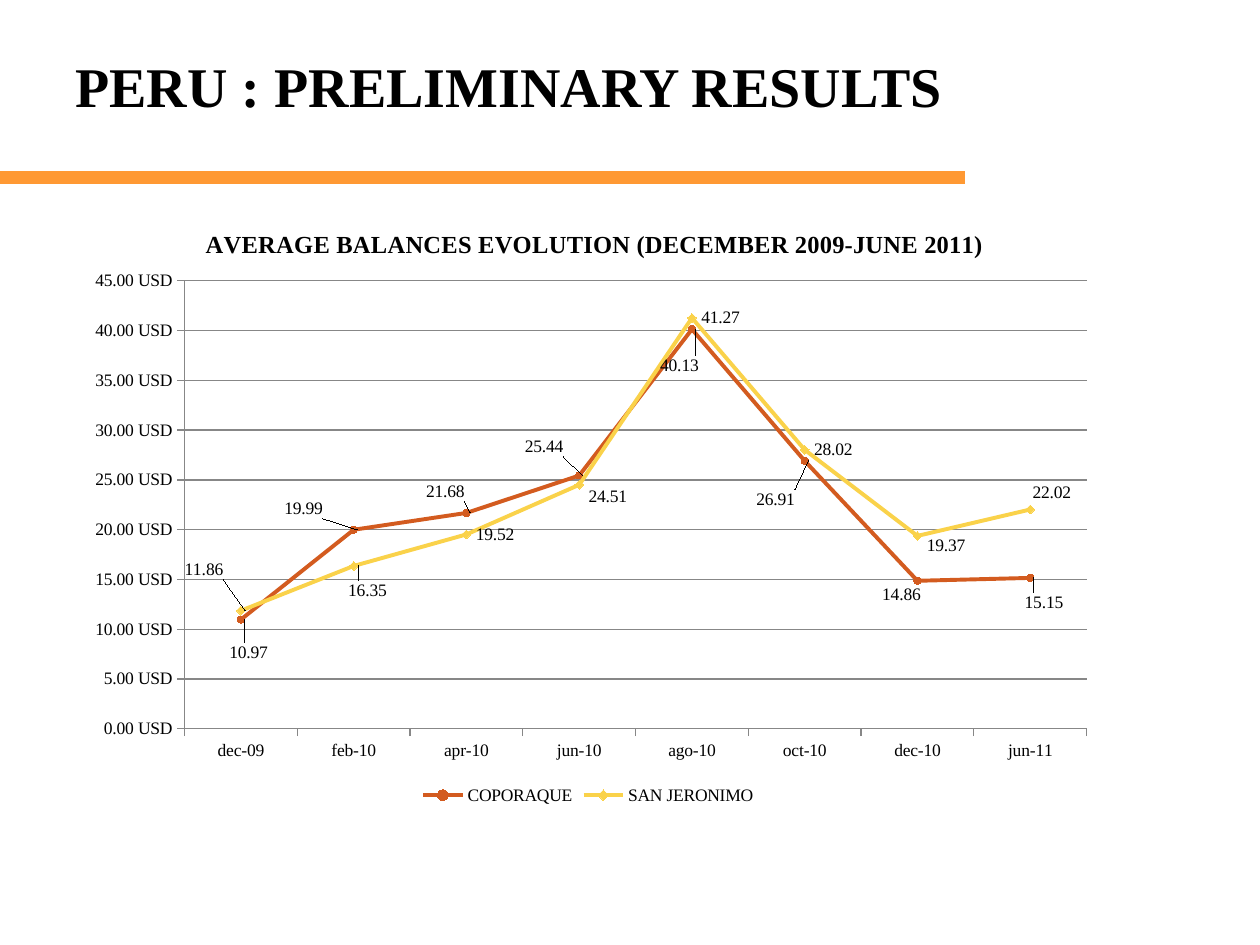
from dataclasses import dataclass

from lxml.etree import SubElement
from pptx import Presentation
from pptx.chart.data import CategoryChartData
from pptx.dml.color import RGBColor
from pptx.enum.chart import (XL_CHART_TYPE, XL_LABEL_POSITION, XL_LEGEND_POSITION,
                             XL_MARKER_STYLE, XL_TICK_MARK)
from pptx.enum.shapes import MSO_CONNECTOR
from pptx.oxml import parse_xml
from pptx.oxml.ns import nsdecls, qn
from pptx.util import Pt

BLACK = RGBColor(0x00, 0x00, 0x00)
GRAY = RGBColor(0x87, 0x87, 0x87)
ORANGE = RGBColor(0xFF, 0x99, 0x33)
RUST = RGBColor(0xD3, 0x5B, 0x1F)
YELLOW = RGBColor(0xFA, 0xD2, 0x4A)
FONT = "Times New Roman"
CHART_WIDTH, CHART_HEIGHT = 589.7, 351.4
MONTHS = ["dec-09", "feb-10", "apr-10", "jun-10", "ago-10", "oct-10", "dec-10", "jun-11"]


@dataclass(frozen=True)
class Village:
    """A village's balances, its look, and label shifts in points by month index."""
    name: str
    balances: list[float]
    color: RGBColor
    marker: XL_MARKER_STYLE
    marker_size: int
    label_shifts: dict[int, tuple[float, float]]


VILLAGES = [
    Village("COPORAQUE", [10.97, 19.99, 21.68, 25.44, 40.13, 26.91, 14.86, 15.15],
            RUST, XL_MARKER_STYLE.CIRCLE, 4,
            {0: (-11.5, 19), 1: (-44.5, -12), 2: (-28, -12.5), 3: (-36, -16.5),
             4: (-23, 20.5), 5: (-32.5, 22), 6: (-25, 8), 7: (-8, 14)}),
    Village("SAN JERONIMO", [11.86, 16.35, 19.52, 24.51, 41.27, 28.02, 19.37, 22.02],
            YELLOW, XL_MARKER_STYLE.DIAMOND, 5,
            {0: (-37.5, -23.5), 1: (-8.5, 14), 3: (0, 7), 6: (0, 5.5), 7: (-4, -10)}),
]


def set_font(font, size: float, bold: bool = False) -> None:
    """Apply the slide's typeface in black."""
    font.name, font.size, font.bold = FONT, Pt(size), bold
    font.color.rgb = BLACK


def manual_layout(x: float, y: float, size: tuple[float, float] | None = None,
                  edge: bool = True):
    """Return a chart layout element for a place given in points."""
    layout = parse_xml(f"<c:layout {nsdecls('c')}><c:manualLayout/></c:layout>")
    settings = []
    if size:
        settings.append(("layoutTarget", "inner"))
    if edge:
        settings += [("xMode", "edge"), ("yMode", "edge")]
    settings += [("x", x / CHART_WIDTH), ("y", y / CHART_HEIGHT)]
    if size:
        settings += [("w", size[0] / CHART_WIDTH), ("h", size[1] / CHART_HEIGHT)]
    for tag, value in settings:
        SubElement(layout[0], qn(f"c:{tag}")).set("val", str(value))
    return layout


def place(parent, layout, after: str | None = None) -> None:
    """Replace the parent's layout, putting it after the named child or first."""
    for old in parent.findall(qn("c:layout")):
        parent.remove(old)
    if after is None:
        parent.insert(0, layout)
    else:
        parent.find(qn(after)).addnext(layout)


def style_series(series, village: Village) -> None:
    """Colour a village's line and position its value labels."""
    series.smooth = False
    series.format.line.color.rgb = village.color
    series.format.line.width = Pt(2.25)
    series.marker.style = village.marker
    series.marker.size = village.marker_size
    series.marker.format.fill.solid()
    series.marker.format.fill.fore_color.rgb = village.color
    series.marker.format.line.color.rgb = village.color
    labels = series.data_labels
    labels.show_value = True
    labels.number_format, labels.number_format_is_linked = "0.00", False
    labels.position = XL_LABEL_POSITION.RIGHT
    set_font(labels.font, 10)
    for month, (dx, dy) in village.label_shifts.items():
        series.points[month].data_label.position = XL_LABEL_POSITION.RIGHT
        label = labels._element.xpath(f"c:dLbl[c:idx/@val='{month}']")[0]
        place(label, manual_layout(dx, dy, edge=False), "c:idx")


def style_axis(axis) -> None:
    """Give an axis a thin gray line with crossing ticks."""
    axis.major_tick_mark = XL_TICK_MARK.CROSS if axis.has_major_gridlines else XL_TICK_MARK.OUTSIDE
    axis.minor_tick_mark = XL_TICK_MARK.NONE
    axis.format.line.color.rgb = GRAY
    axis.format.line.width = Pt(0.75)
    set_font(axis.tick_labels.font, 10)


def add_title(slide) -> None:
    """Add the slide heading and the orange rule below it."""
    rule = slide.shapes.add_connector(MSO_CONNECTOR.STRAIGHT, Pt(0), Pt(101.3), Pt(551.3), Pt(101.3))
    rule.line.color.rgb = ORANGE
    rule.line.width = Pt(7.25)
    SubElement(rule._element.spPr, qn("a:effectLst"))
    heading = slide.shapes.add_textbox(Pt(36), Pt(21.6), Pt(648), Pt(90)).text_frame
    heading.word_wrap = True
    heading.margin_top = Pt(8)
    heading.text = "PERU : PRELIMINARY RESULTS"
    set_font(heading.paragraphs[0].font, 32, True)


def add_balances(slide) -> None:
    """Add the line chart of average balances."""
    data = CategoryChartData(number_format="0.00")
    data.categories = MONTHS
    for village in VILLAGES:
        data.add_series(village.name, village.balances)
    chart = slide.shapes.add_chart(XL_CHART_TYPE.LINE_MARKERS, Pt(42.5), Pt(113),
                                   Pt(CHART_WIDTH), Pt(CHART_HEIGHT), data).chart
    set_font(chart.font, 10)
    chart.plots[0].vary_by_categories = False

    chart.has_title = True
    chart_title = chart.chart_title
    chart_title.text_frame.text = "AVERAGE BALANCES EVOLUTION (DECEMBER 2009-JUNE 2011)"
    set_font(chart_title.text_frame.paragraphs[0].font, 14, True)
    place(chart_title._element, manual_layout(72.5, 15), "c:tx")

    chart.has_legend = True
    chart.legend.position = XL_LEGEND_POSITION.BOTTOM
    chart.legend.include_in_layout = False
    set_font(chart.legend.font, 10)
    place(chart.legend._element, manual_layout(196, 333), "c:legendPos")

    balance_axis = chart.value_axis
    balance_axis.minimum_scale, balance_axis.maximum_scale = 0, 45
    balance_axis.major_unit = 5
    balance_axis.has_major_gridlines = True
    balance_axis.major_gridlines.format.line.color.rgb = GRAY
    balance_axis.major_gridlines.format.line.width = Pt(0.75)
    balance_axis.tick_labels.number_format = r"#,##0.00\ [$USD]"
    balance_axis.tick_labels.number_format_is_linked = False
    for axis in (balance_axis, chart.category_axis):
        style_axis(axis)
    for series, village in zip(chart.plots[0].series, VILLAGES):
        style_series(series, village)
    place(chart._chartSpace.chart.plotArea, manual_layout(63, 47.5, (515.5, 256)))


def main() -> None:
    """Build and save the slide."""
    presentation = Presentation()
    presentation.slide_width, presentation.slide_height = Pt(720), Pt(540)
    slide = presentation.slides.add_slide(presentation.slide_layouts[6])
    add_title(slide)
    add_balances(slide)
    presentation.save("out.pptx")


if __name__ == "__main__":
    main()
